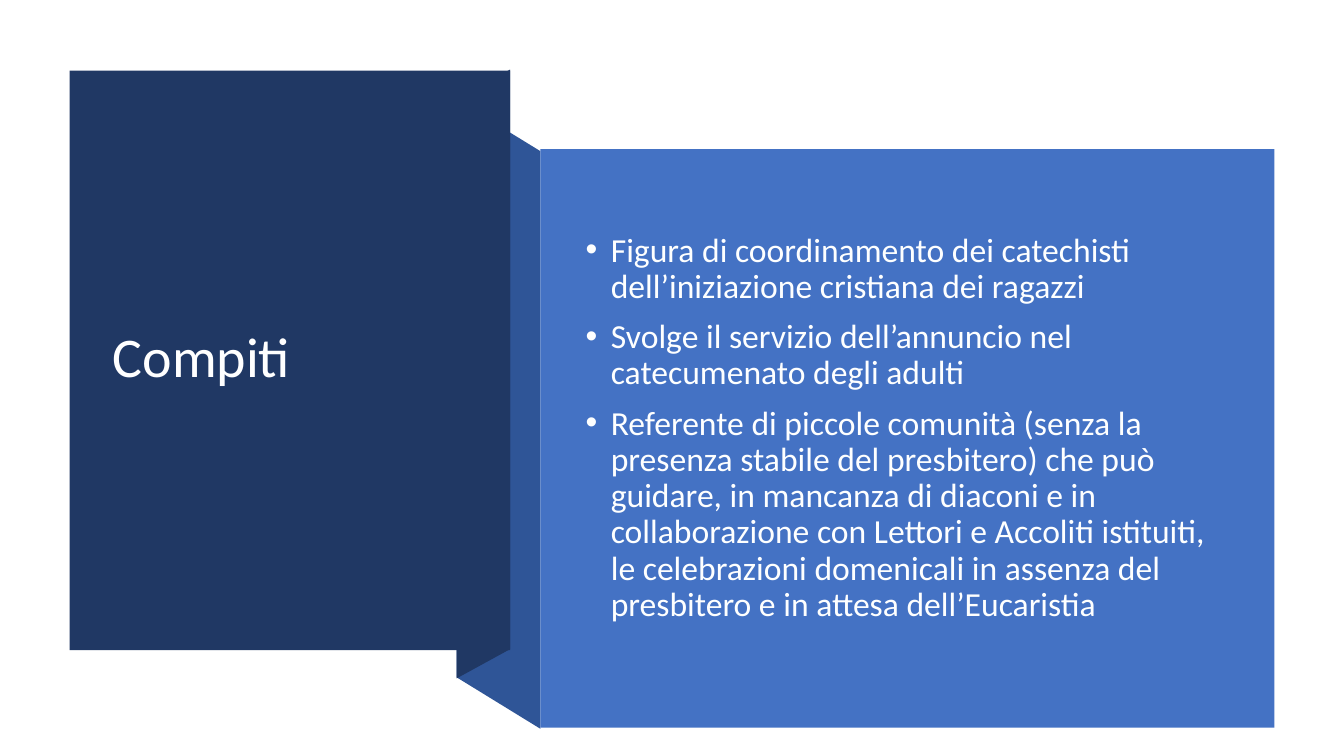
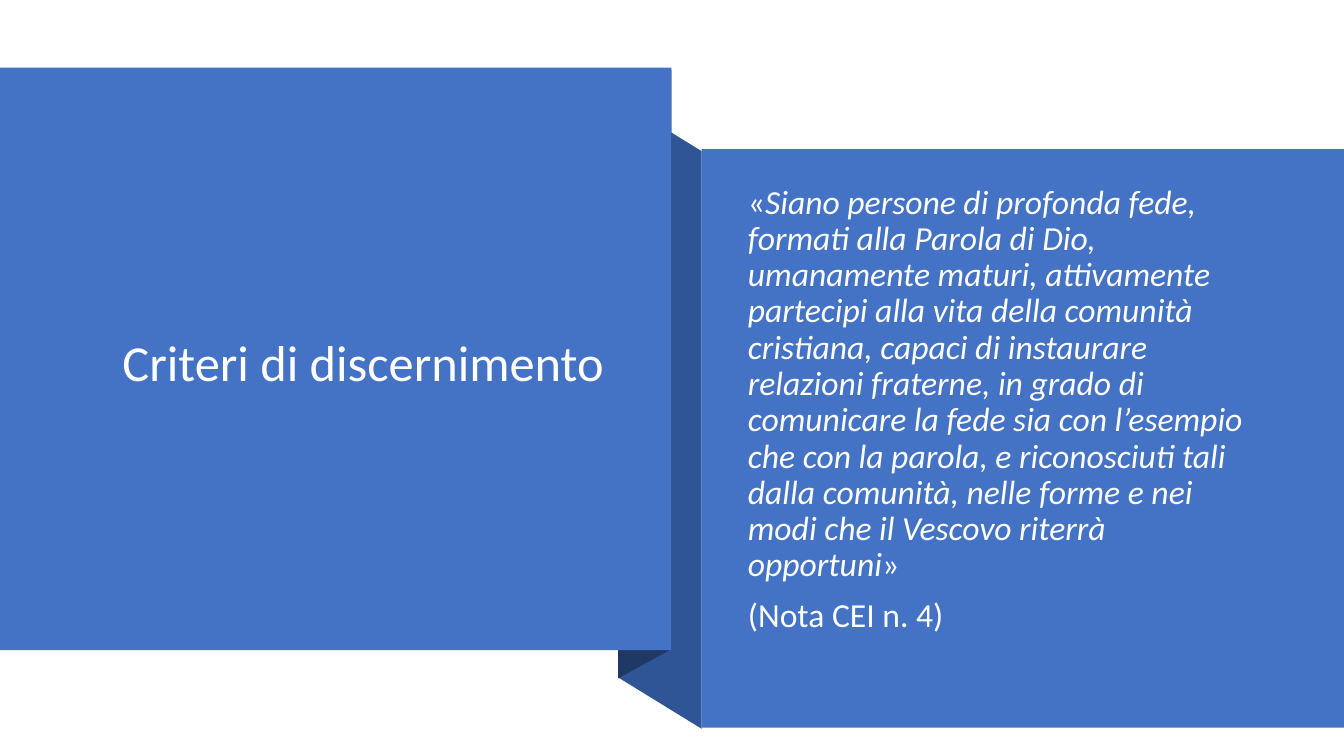
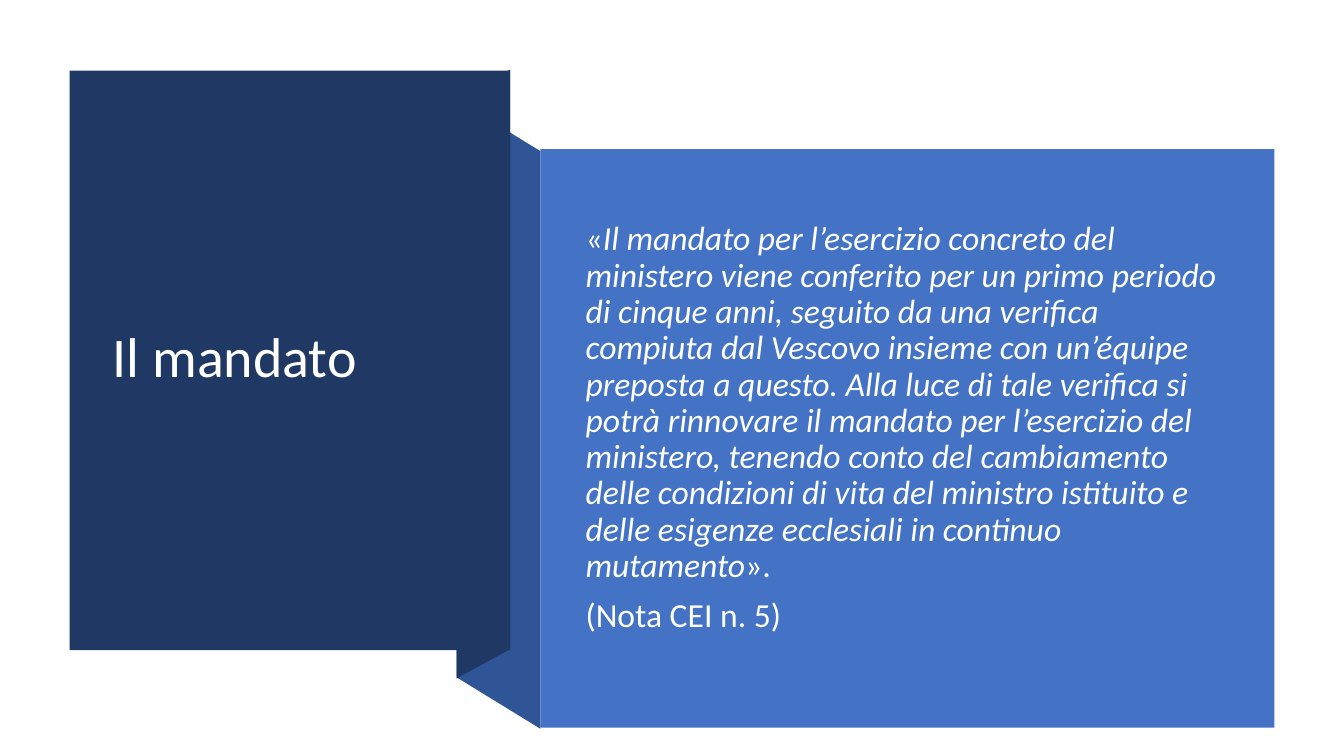
from dataclasses import dataclass

from lxml.etree import SubElement
from pptx import Presentation
from pptx.dml.color import RGBColor
from pptx.enum.shapes import MSO_SHAPE
from pptx.enum.text import MSO_ANCHOR, PP_ALIGN
from pptx.oxml.ns import qn
from pptx.util import Inches, Pt


@dataclass(frozen=True)
class Theme:
    font: str = "Calibri"
    panel: str = "4472C4"
    fold: str = "2F5597"
    dark: str = "203864"
    title_text: str = "FFFFFF"
    body_text: str = "FEFFFF"
    body_size: int = 24
    line_spacing: float = 0.9
    space_before: int = 10


@dataclass(frozen=True)
class Box:
    x: float
    y: float
    w: float
    h: float

    def emu(self) -> tuple:
        return Inches(self.x), Inches(self.y), Inches(self.w), Inches(self.h)


@dataclass(frozen=True)
class Run:
    text: str
    italic: bool = False


@dataclass(frozen=True)
class Layout:
    title_panel: Box
    title_fill: str
    title_box: Box
    title_size: int
    title_align: PP_ALIGN
    body_panel: Box
    body_box: Box


@dataclass(frozen=True)
class Page:
    layout: Layout
    title: str
    body: list[list[Run]]
    bulleted: bool = False


THEME = Theme()

CARD = Layout(
    title_panel=Box(0.69, 0.7, 4.37, 5.75), title_fill=THEME.dark,
    title_box=Box(1.02, 1.07, 3.71, 4.99), title_size=40, title_align=PP_ALIGN.LEFT,
    body_panel=Box(5.36, 1.48, 7.28, 5.74), body_box=Box(5.71, 1.88, 6.51, 4.74),
)
FULL_WIDTH = Layout(
    title_panel=Box(0, 0.67, 6.66, 5.78), title_fill=THEME.panel,
    title_box=Box(0.95, 1.32, 5.14, 4.6), title_size=36, title_align=PP_ALIGN.RIGHT,
    body_panel=Box(6.96, 1.48, 6.37, 5.74), body_box=Box(7.32, 1.68, 5.14, 4.77),
)

PAGES = [
    Page(CARD, "Compiti", [
        [Run("Figura di coordinamento dei catechisti dell’iniziazione cristiana dei ragazzi")],
        [Run("Svolge il servizio dell’annuncio nel catecumenato degli adulti")],
        [Run("Referente di piccole comunità (senza la presenza stabile del presbitero) che può "
             "guidare, in mancanza di diaconi e in collaborazione con Lettori e Accoliti "
             "istituiti, le celebrazioni domenicali in assenza del presbitero e in attesa "
             "dell’Eucaristia")],
    ], bulleted=True),
    Page(FULL_WIDTH, "Criteri di discernimento", [
        [Run("«"),
         Run("Siano persone di profonda fede, formati alla Parola di Dio, umanamente maturi, "
             "attivamente partecipi alla vita della comunità cristiana, capaci di instaurare "
             "relazioni fraterne, in grado di comunicare la fede sia con l’esempio che con la "
             "parola, e riconosciuti tali dalla comunità, nelle forme e nei modi che il Vescovo "
             "riterrà opportuni", italic=True),
         Run("»")],
        [Run("(Nota CEI n. 4)")],
    ]),
    Page(CARD, "Il mandato", [
        [Run("«"),
         Run("Il mandato per l’esercizio concreto del ministero viene conferito per un primo "
             "periodo di cinque anni, seguito da una verifica compiuta dal Vescovo insieme con "
             "un’équipe preposta a questo. Alla luce di tale verifica si potrà rinnovare il "
             "mandato per l’esercizio del ministero, tenendo conto del cambiamento delle "
             "condizioni di vita del ministro istituito e delle esigenze ecclesiali in continuo "
             "mutamento", italic=True),
         Run("».")],
        [Run("(Nota CEI n. 5)")],
    ]),
]


def paint(sp, color: str) -> None:
    sp.shadow.inherit = False
    sp.fill.solid()
    sp.fill.fore_color.rgb = RGBColor.from_string(color)
    sp.line.fill.background()


def add_panel(s, box: Box, color: str) -> None:
    paint(s.shapes.add_shape(MSO_SHAPE.RECTANGLE, *box.emu()), color)


def add_polygon(s, points: list[tuple[float, float]], color: str) -> None:
    start, *rest = [(Inches(x), Inches(y)) for x, y in points]
    builder = s.shapes.build_freeform(*start)
    builder.add_line_segments(rest, close=True)
    paint(builder.convert_to_shape(), color)


def add_ribbon_fold(s, right: float) -> None:
    left, crease = right - 0.83, right - 0.3
    add_polygon(s, [(right, 7.23), (left, 6.72), (left, 0.99), (right, 1.5)], THEME.fold)
    add_polygon(s, [(crease, 6.44), (left, 6.73), (left, 0.98), (crease, 0.69)], THEME.dark)


def add_bullet(p) -> None:
    pPr = p._p.get_or_add_pPr()
    pPr.set("marL", str(Inches(0.25)))
    pPr.set("indent", str(-Inches(0.25)))
    SubElement(pPr, qn("a:buFont")).set("typeface", "Arial")
    SubElement(pPr, qn("a:buChar")).set("char", "•")


def add_text(s, box: Box, paragraphs: list[list[Run]], size: int, color: str,
             align: PP_ALIGN = PP_ALIGN.LEFT, space_before: int = 0,
             bulleted: bool = False) -> None:
    tf = s.shapes.add_textbox(*box.emu()).text_frame
    tf.word_wrap = True
    tf.vertical_anchor = MSO_ANCHOR.MIDDLE
    for i, runs in enumerate(paragraphs):
        p = tf.add_paragraph() if i else tf.paragraphs[0]
        p.alignment = align
        p.line_spacing = THEME.line_spacing
        p.space_before = Pt(space_before)
        if bulleted:
            add_bullet(p)
        for run in runs:
            r = p.add_run()
            r.text = run.text
            r.font.name = THEME.font
            r.font.size = Pt(size)
            r.font.italic = run.italic
            r.font.color.rgb = RGBColor.from_string(color)


def add_page(prs, page: Page) -> None:
    s = prs.slides.add_slide(prs.slide_layouts[6])
    lay = page.layout
    add_ribbon_fold(s, lay.body_panel.x)
    add_panel(s, lay.title_panel, lay.title_fill)
    add_text(s, lay.title_box, [[Run(page.title)]], lay.title_size, THEME.title_text,
             align=lay.title_align)
    add_panel(s, lay.body_panel, THEME.panel)
    add_text(s, lay.body_box, page.body, THEME.body_size, THEME.body_text,
             space_before=THEME.space_before, bulleted=page.bulleted)


def main() -> None:
    prs = Presentation()
    prs.slide_width, prs.slide_height = Inches(13.33), Inches(7.5)
    for page in PAGES:
        add_page(prs, page)
    prs.save("out.pptx")


if __name__ == "__main__":
    main()
